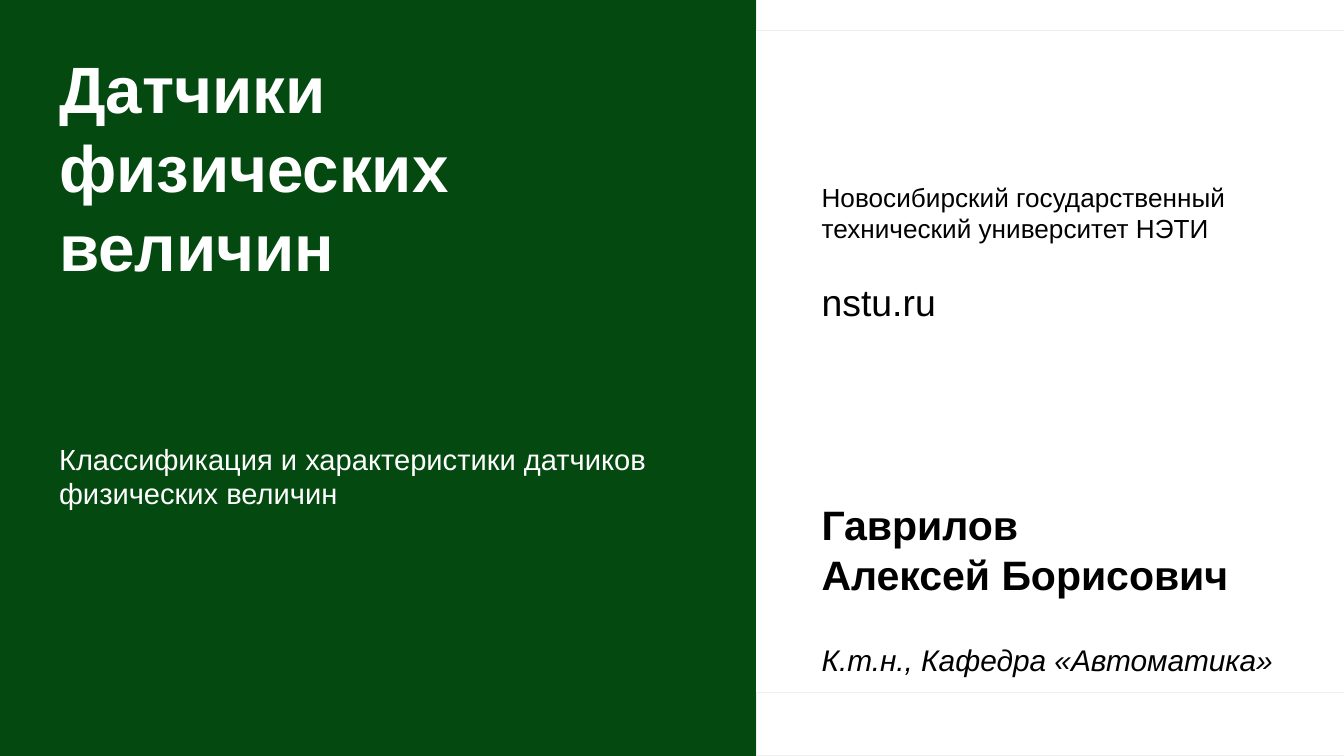
from dataclasses import dataclass

from pptx import Presentation
from pptx.dml.color import RGBColor
from pptx.enum.shapes import MSO_SHAPE
from pptx.util import Inches, Pt

RECTANGLE = MSO_SHAPE.RECTANGLE
WIDTH = 10
HEIGHT = WIDTH * 9 / 16
PANEL_SHARE = 9 / 16


@dataclass(frozen=True)
class Theme:
    """Colours, font and type sizes of the deck."""
    green: str = "034910"
    white: str = "FFFFFF"
    black: str = "000000"
    edge: str = "EEEEEE"
    font: str = "Arial"
    title: float = 35.1
    subtitle: float = 15.6
    name: float = 22
    site: float = 20
    position: float = 16
    school: float = 14


THEME = Theme()


def add_text(page, box, lines, color, left_inset=0.1):
    """Place lines of (text, size, bold, italic, space before) in a box."""
    frame = page.shapes.add_textbox(*map(Inches, box)).text_frame
    frame.word_wrap = True
    frame.margin_left = Inches(left_inset)
    for index, (text, size, bold, italic, before) in enumerate(lines):
        para = frame.add_paragraph() if index else frame.paragraphs[0]
        para.text = text
        if before:
            para.space_before = Pt(before)
        for span in para.runs:
            span.font.name = THEME.font
            span.font.size = Pt(size)
            span.font.bold = bold
            span.font.italic = italic
            span.font.color.rgb = RGBColor.from_string(color)


def add_block(page, box, color, edge=None):
    """Draw a filled rectangle, with a fine edge if one is given."""
    block = page.shapes.add_shape(RECTANGLE, *map(Inches, box))
    block.shadow.inherit = False
    block.fill.solid()
    block.fill.fore_color.rgb = RGBColor.from_string(color)
    if edge:
        block.line.color.rgb = RGBColor.from_string(edge)
        block.line.width = Pt(0.5)
    else:
        block.line.fill.background()


def add_title_panel(page, box):
    """Fill the panel and set the lecture title and subtitle on it."""
    left, top, width, height = box
    add_block(page, box, THEME.green)
    lines = [
        ("Датчики физических величин", THEME.title, True, False, 0),
        ("Классификация и характеристики датчиков физических величин",
         THEME.subtitle, False, False, 84),
    ]
    text_box = (left + 0.44, top + 0.31, width - 0.6, height - 0.46)
    add_text(page, text_box, lines, THEME.white, left_inset=0)


def add_speaker_panel(page, box):
    """Set the school, its site and the speaker between two strips."""
    left, top, width, height = box
    for offset, strip_height in ((0, 0.23), (height - 0.47, 0.47)):
        strip = (left, top + offset, width, strip_height)
        add_block(page, strip, THEME.white, THEME.edge)
    blocks = [
        (3.67, 3.67, 1.45, [
            ("Гаврилов", THEME.name, True, False, 0),
            ("Алексей Борисович", THEME.name, True, False, 0),
            ("К.т.н., Кафедра «Автоматика»", THEME.position, False, True, 23),
        ]),
        (2.03, 1.25, 0.47, [("nstu.ru", THEME.site, False, False, 0)]),
        (1.3, 3.57, 0.81, [
            ("Новосибирский государственный", THEME.school, False, False, 0),
            ("технический университет НЭТИ", THEME.school, False, False, 0),
        ]),
    ]
    for offset, block_width, block_height, lines in blocks:
        text_box = (left + 0.39, top + offset, block_width, block_height)
        add_text(page, text_box, lines, THEME.black)


def main():
    """Build the title slide and save the deck."""
    deck = Presentation()
    deck.slide_width, deck.slide_height = Inches(WIDTH), Inches(HEIGHT)
    page = deck.slides.add_slide(deck.slide_layouts[6])
    split = WIDTH * PANEL_SHARE
    add_speaker_panel(page, (split, 0, WIDTH - split, HEIGHT))
    add_title_panel(page, (0, 0, split, HEIGHT))
    deck.save("out.pptx")


if __name__ == "__main__":
    main()
